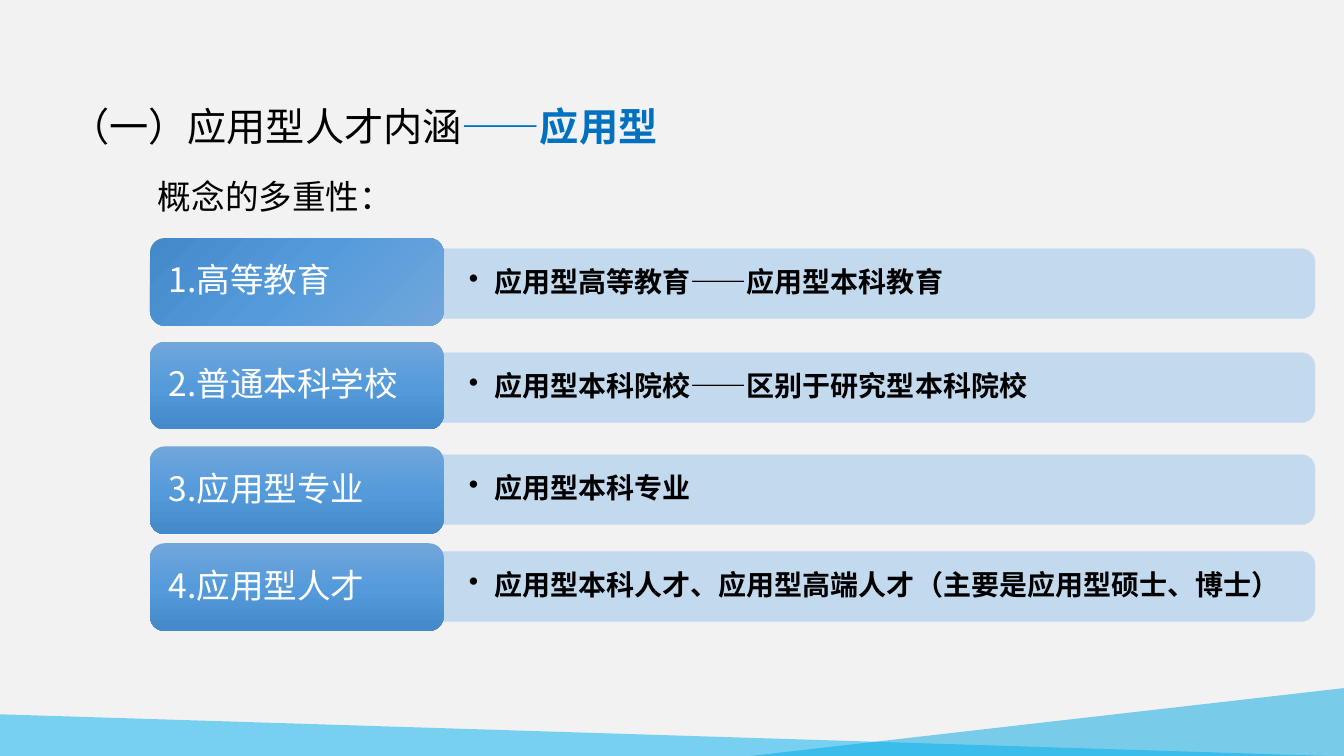
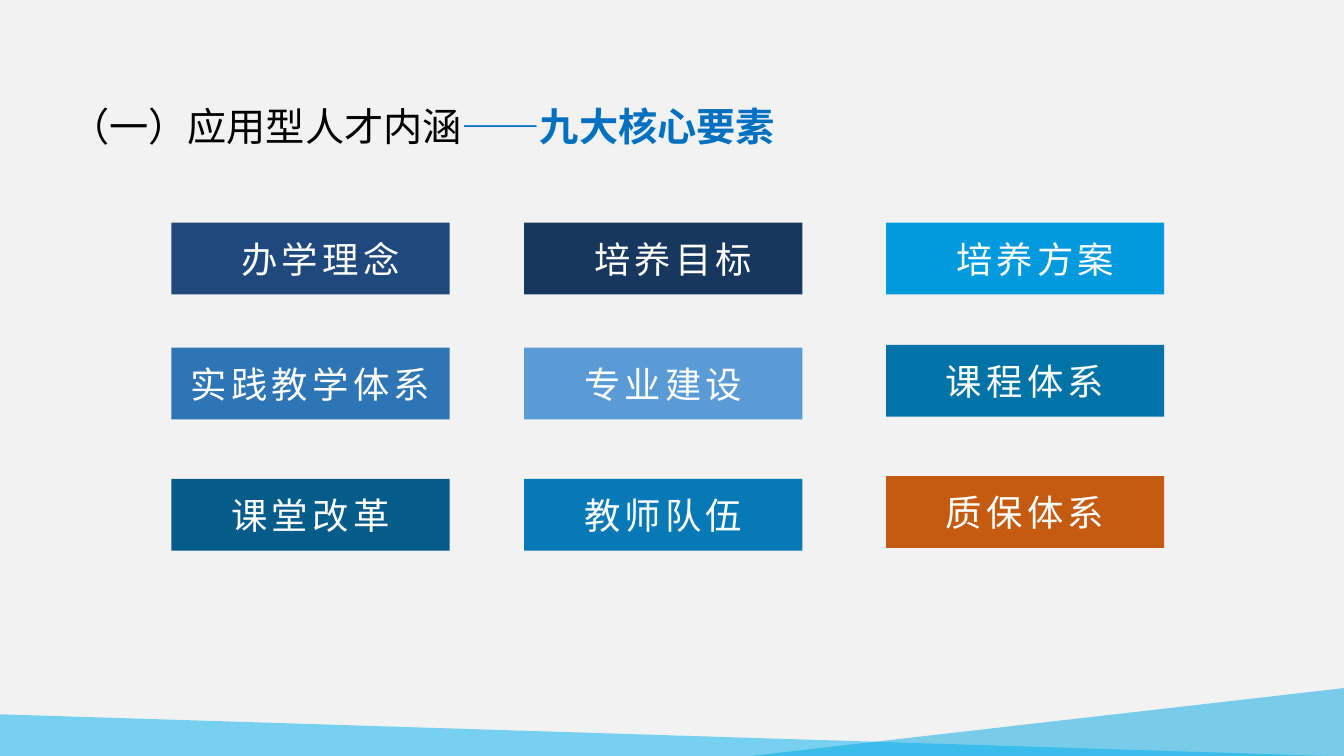
import copy
import dataclasses
import math

import pptx
import pptx.dml.color
import pptx.enum.shapes
import pptx.enum.text
import pptx.oxml
import pptx.oxml.ns
import pptx.util

Cm = pptx.util.Cm
SHAPES = pptx.enum.shapes.MSO_SHAPE
ALIGN = pptx.enum.text.PP_ALIGN
ANCHOR = pptx.enum.text.MSO_ANCHOR


@dataclasses.dataclass(frozen=True)
class Theme:
    """Colours, font and type sizes of the deck."""
    font: str = "Noto Sans CJK SC"
    page: str = "F2F2F2"
    ink: str = "000000"
    light: str = "FFFFFF"
    accent: str = "0070C0"
    wedge_right: str = "00A7E2"
    wedge_left: str = "00B0F0"
    bar: str = "BDD7EE"
    bar_edge: str = "D2DEEF"
    label: tuple = ("71A6DB", "559BDB", "448ACA")
    title_size: int = 28
    tile_size: int = 26
    label_size: int = 24
    bar_size: int = 20


@dataclasses.dataclass(frozen=True)
class Box:
    """A region in centimetres."""
    left: float
    top: float
    width: float
    height: float

    def lengths(self):
        """Return the four lengths for python-pptx."""
        return [Cm(value) for value in (self.left, self.top, self.width, self.height)]


THEME = Theme()
PAGE = Box(0, 0, 33.87, 19.05)
TITLE = Box(1.52, 2.46, 19, 1.45)
TOPIC = "（一）应用型人才内涵"

CONCEPTS = [
    (6.0, 6.27, "1.高等教育", "应用型高等教育——应用型本科教育"),
    (8.61, 8.89, "2.普通本科学校", "应用型本科院校——区别于研究型本科院校"),
    (11.25, 11.46, "3.应用型专业", "应用型本科专业"),
    (13.69, 13.9, "4.应用型人才", "应用型本科人才、应用型高端人才（主要是应用型硕士、博士）"),
]

ELEMENTS = [
    [("办学理念", "1F497D"), ("培养目标", "17375E"), ("培养方案", "019ADD")],
    [("实践教学体系", "2E75B6"), ("专业建设", "5B9BD5"), ("课程体系", "0173A6")],
    [("课堂改革", "055B89"), ("教师队伍", "0779B7"), ("质保体系", "C55A11")],
]


def rgb(value):
    """Turn a hex string into a colour."""
    return pptx.dml.color.RGBColor.from_string(value)


def set_all(target, formats):
    """Set every attribute in a dict of format values."""
    for name, value in formats.items():
        setattr(target, name, value)


def add_child(parent, tag, **attributes):
    """Append a drawing element with attributes."""
    child = parent.makeelement(pptx.oxml.ns.qn(tag), attributes)
    parent.append(child)
    return child


def paint(fill, colour, opacity=100):
    """Give a fill a solid colour and an opacity in percent."""
    fill.solid()
    fill.fore_color.rgb = rgb(colour)
    if opacity < 100:
        colour_element = fill._xPr.find(".//" + pptx.oxml.ns.qn("a:srgbClr"))
        add_child(colour_element, "a:alpha", val=str(opacity * 1000))


def paint_gradient(shape, colours, angle):
    """Spread colours evenly along a linear gradient."""
    shape.fill.gradient()
    shape.fill.gradient_angle = angle
    stops = shape._element.spPr.find(".//" + pptx.oxml.ns.qn("a:gsLst"))
    while len(stops) < len(colours):
        stops.append(copy.deepcopy(stops[0]))
    for index, (stop, colour) in enumerate(zip(shape.fill.gradient_stops, colours)):
        stop.color.rgb = rgb(colour)
        stop.position = index / (len(colours) - 1)


def add_span(para, text, size, colour, bold=False, tracking=0):
    """Add a styled run to a paragraph."""
    span = para.add_run()
    span.text = text
    set_all(span.font, {"name": THEME.font, "size": pptx.util.Pt(size), "bold": bold})
    span.font.color.rgb = rgb(colour)
    properties = span.font._element
    add_child(properties, "a:ea", typeface=THEME.font)
    if tracking:
        properties.set("spc", str(tracking * 100))


def open_text(shape, insets=(0.25, 0.13, 0.25, 0.13), anchor=ANCHOR.MIDDLE, **formats):
    """Prepare the text frame and return its formatted first paragraph."""
    frame = shape.text_frame
    sides = ("margin_left", "margin_top", "margin_right", "margin_bottom")
    set_all(frame, {side: Cm(inset) for side, inset in zip(sides, insets)})
    set_all(frame, {"word_wrap": True, "vertical_anchor": anchor})
    para = frame.paragraphs[0]
    set_all(para, {"alignment": ALIGN.LEFT, **formats})
    return para


def add_plain_shape(page, kind, box):
    """Add a preset shape without outline or shadow."""
    shape = page.shapes.add_shape(kind, *box.lengths())
    shape.shadow.inherit = False
    shape.line.fill.background()
    return shape


def add_wedges(page, box):
    """Draw the two translucent wedges along the bottom of the page."""
    bottom = box.top + box.height
    right = Box(box.left + box.width - 14.95, bottom - 1.71, 14.95, 1.71)
    left = Box(box.left, bottom - 1.05, 33.48, 1.05)
    for wedge, colour, flipped in ((right, THEME.wedge_right, True), (left, THEME.wedge_left, False)):
        shape = add_plain_shape(page, SHAPES.RIGHT_TRIANGLE, wedge)
        paint(shape.fill, colour, 50)
        if flipped:
            shape._element.spPr.xfrm.set("flipH", "1")


def add_title(page, box, emphasis):
    """Write the shared topic followed by its emphasised aspect."""
    para = open_text(page.shapes.add_textbox(*box.lengths()), anchor=ANCHOR.TOP)
    add_span(para, TOPIC, THEME.title_size, THEME.ink)
    add_span(para, "——" + emphasis, THEME.title_size, THEME.accent, bold=True)


def add_subtitle(page, box, text):
    """Write the line that introduces the concept rows."""
    para = open_text(page.shapes.add_textbox(*box.lengths()), anchor=ANCHOR.TOP,
                     line_spacing=pptx.util.Pt(29))
    add_span(para, text, THEME.label_size, THEME.ink)


def add_bar(page, box, text, radius=0.34):
    """Draw a bar rounded on its right side with one bulleted line."""
    right, bottom = box.left + box.width, box.top + box.height
    points = [(box.left, box.top)]
    for start, centre_y in ((-90, box.top + radius), (0, bottom - radius)):
        for angle in range(start, start + 91, 10):
            turn = math.radians(angle)
            points.append((right - radius + radius * math.cos(turn),
                           centre_y + radius * math.sin(turn)))
    points.append((box.left, bottom))
    outline = [(Cm(x), Cm(y)) for x, y in points]
    builder = page.shapes.build_freeform(*outline[0])
    builder.add_line_segments(outline[1:], close=True)
    bar = builder.convert_to_shape()
    bar.shadow.inherit = False
    paint(bar.fill, THEME.bar, 90)
    paint(bar.line.fill, THEME.bar_edge, 90)
    bar.line.width = pptx.util.Pt(0.5)
    para = open_text(bar, (0.69, 0.43, 0.76, 0.43), line_spacing=0.9)
    properties = para._p.get_or_add_pPr()
    for name, length in (("marL", Cm(0.64)), ("indent", -Cm(0.64))):
        properties.set(name, str(length))
    add_child(properties, "a:buChar", char="•")
    add_span(para, text, THEME.bar_size, THEME.ink, bold=True)


def add_label(page, box, text, colours, angle):
    """Draw a rounded gradient label."""
    label = add_plain_shape(page, SHAPES.ROUNDED_RECTANGLE, box)
    paint_gradient(label, colours, angle)
    para = open_text(label, (0.36, 0.23, 0.36, 0.23), line_spacing=0.9)
    add_span(para, text, THEME.label_size, THEME.light)


def add_concepts(page, left):
    """Stack the concept rows, each a label joined to a bar."""
    for index, (label_top, bar_top, name, meaning) in enumerate(CONCEPTS):
        add_bar(page, Box(left + 7.35, bar_top, 22.01, 1.76), meaning)
        fill = (THEME.label, 270) if index else (THEME.label[::-1], 315)
        add_label(page, Box(left, label_top, 7.4, 2.21), name, *fill)


def add_elements(page, left, top):
    """Lay out the core elements in a grid of tiles."""
    columns = ((0, 0), (8.89, 0), (18.01, 0.07))
    rows = (0, 3.15, 6.46)
    for row, (offset, tiles) in enumerate(zip(rows, ELEMENTS)):
        for (shift, rise), (name, colour) in zip(columns, tiles):
            tile_top = top + offset - (rise if row else 0)
            tile = add_plain_shape(page, SHAPES.RECTANGLE, Box(left + shift, tile_top, 7.01, 1.81))
            paint(tile.fill, colour)
            inset = 0.25 if row else 0.76
            para = open_text(tile, (inset, 0.13, 0.25, 0.13), alignment=ALIGN.CENTER)
            add_span(para, name, THEME.tile_size, THEME.light, tracking=3)


def add_page(deck, emphasis):
    """Start a page with the shared wedges and title."""
    page = deck.slides.add_slide(deck.slide_layouts[6])
    add_wedges(page, PAGE)
    add_title(page, TITLE, emphasis)
    return page


def build_concept_page(deck):
    """Build the page on the meanings of the concept."""
    page = add_page(deck, "应用型")
    add_subtitle(page, Box(3.73, 4.29, 7, 1.3), "概念的多重性：")
    add_concepts(page, 3.78)


def build_element_page(deck):
    """Build the page on the nine core elements."""
    page = add_page(deck, "九大核心要素")
    add_elements(page, 4.32, 5.61)


def main():
    """Build and save the deck."""
    deck = pptx.Presentation()
    set_all(deck, {"slide_width": Cm(PAGE.width), "slide_height": Cm(PAGE.height)})
    paint(deck.slide_master.background.fill, THEME.page)
    build_concept_page(deck)
    build_element_page(deck)
    deck.save("out.pptx")


if __name__ == "__main__":
    main()
